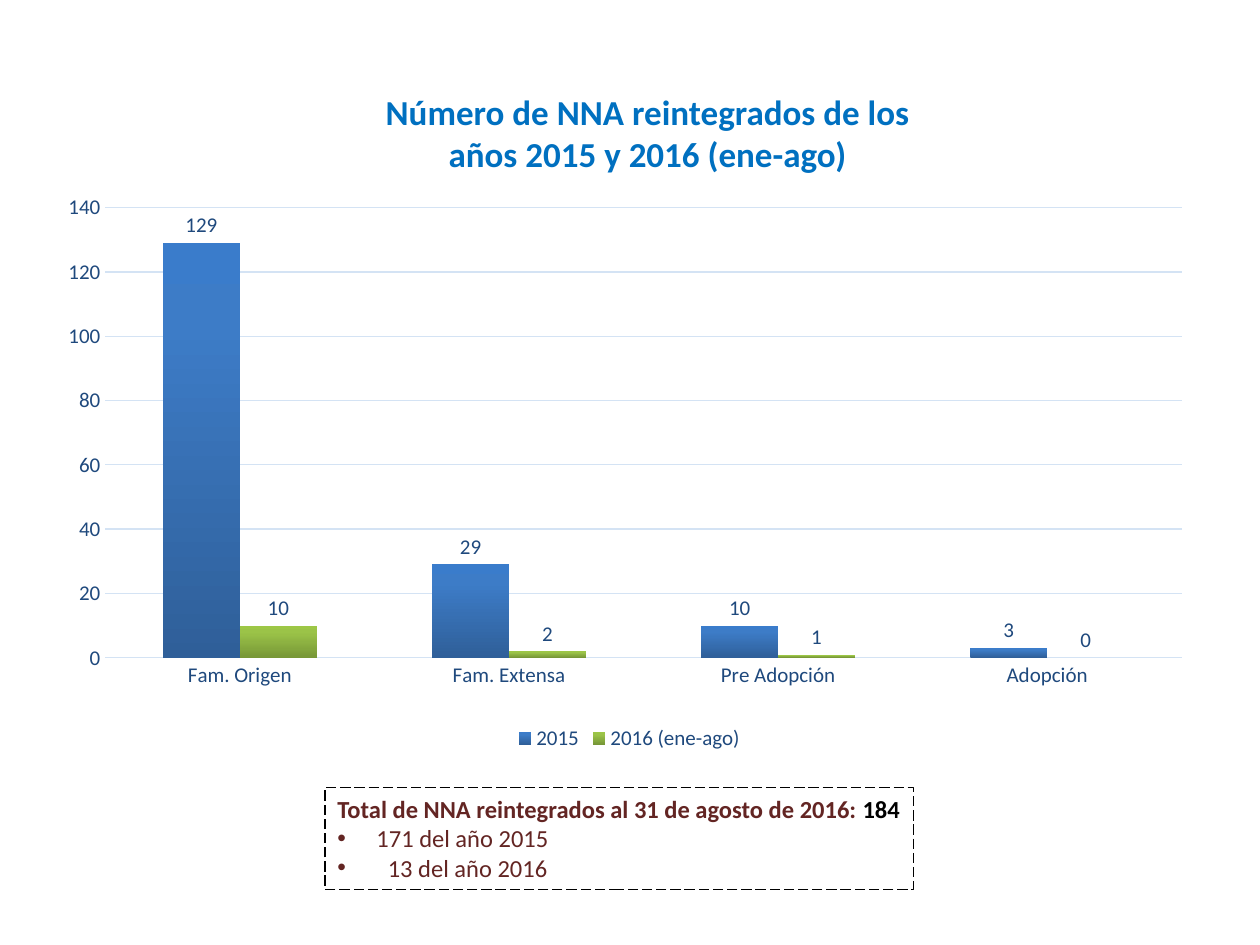
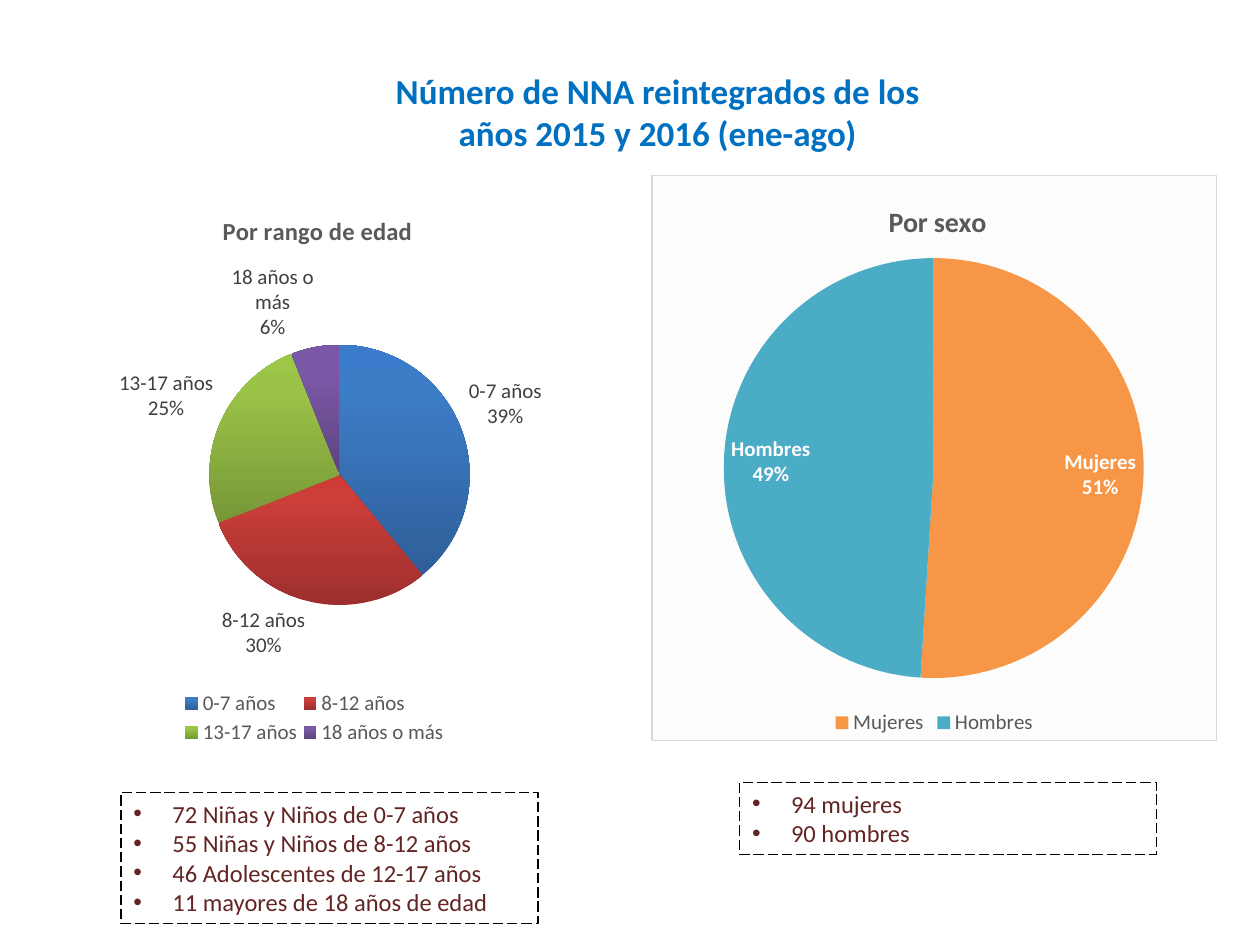
from copy import deepcopy
from dataclasses import dataclass
from typing import Optional

from lxml import etree
from pptx import Presentation
from pptx import util as u
from pptx.chart import data as chart_data
from pptx.dml.color import RGBColor
from pptx.enum import chart as ch
from pptx.enum import dml, shapes, text
from pptx.oxml import parse_xml
from pptx.oxml.ns import nsdecls, qn

FONT = "Calibri"
HEADING = "Número de NNA reintegrados de los años 2015 y 2016 (ene-ago)"
COLORS = {
    "heading": "0070C0",
    "note": "632523",
    "black": "000000",
    "white": "FFFFFF",
    "axis_text": "1F497D",
    "grid": "D4E3F4",
    "legend_text": "595959",
    "label_text": "404040",
    "panel": "F2F2F2",
    "panel_border": "D9D9D9",
    "women": "F79646",
    "men": "4BACC6",
}
# Bottom, 80 % and top tone of each gradient
TONES = {
    "blue": ("2F5F99", "3D7CC7", "3A7CCB"),
    "red": ("9C2F2D", "CB3E3A", "CE3B37"),
    "green": ("779737", "9BC348", "9DC746"),
    "purple": ("5F4480", "7B58A6", "7C57A8"),
}


@dataclass
class Box:
    left: float
    top: float
    width: float
    height: float

    def lengths(self) -> tuple:
        return tuple(u.Inches(v) for v in (self.left, self.top, self.width, self.height))


@dataclass
class Bullet:
    words: str
    indent: float = 0.31


@dataclass
class Note:
    box: Box
    bullets: list
    lead: str = ""
    total: str = ""


@dataclass
class Pie:
    box: Box
    title: str
    title_size: int
    title_at: tuple
    shares: dict
    fills: list
    plot_at: tuple
    label_position: object
    label_color: str
    label_bold: bool = False
    legend_at: Optional[tuple] = None
    framed: bool = False


def rgb(name: str) -> RGBColor:
    return RGBColor.from_string(COLORS[name])


def set_font(font, size: float, color: str, bold: bool = False) -> None:
    font.name, font.size, font.bold = FONT, u.Pt(size), bold
    font.color.rgb = rgb(color)


def add_run(paragraph, words: str, size: float, color: str, bold: bool = False) -> None:
    run = paragraph.add_run()
    run.text = words
    set_font(run.font, size, color, bold)


# Slide parts
def add_titled_slide(prs, left: float, top: float):
    slide = prs.slides.add_slide(prs.slide_layouts[5])
    heading = slide.shapes.title
    heading.left, heading.top, heading.width, heading.height = Box(left, top, 4.88, 0.77).lengths()
    frame = heading.text_frame
    frame.word_wrap = True
    frame.auto_size = text.MSO_AUTO_SIZE.SHAPE_TO_FIT_TEXT
    frame.vertical_anchor = text.MSO_ANCHOR.TOP
    paragraph = frame.paragraphs[0]
    paragraph.alignment = text.PP_ALIGN.CENTER
    add_run(paragraph, HEADING, 20, "heading", True)
    return slide


def set_bullet(paragraph, indent: float) -> None:
    props = paragraph._p.get_or_add_pPr()
    props.set("marL", str(u.Inches(indent)))
    props.set("indent", str(-u.Inches(indent)))
    etree.SubElement(props, qn("a:buFont")).set("typeface", "Arial")
    etree.SubElement(props, qn("a:buChar")).set("char", "•")


def add_note(slide, note: Note) -> None:
    frame_box = slide.shapes.add_shape(shapes.MSO_SHAPE.RECTANGLE, *note.box.lengths())
    frame_box.shadow.inherit = False
    frame_box.fill.background()
    frame_box.line.color.rgb = rgb("black")
    frame_box.line.width = u.Pt(0.75)
    frame_box.line.dash_style = dml.MSO_LINE.LONG_DASH
    frame = frame_box.text_frame
    frame.word_wrap = True
    frame.auto_size = text.MSO_AUTO_SIZE.SHAPE_TO_FIT_TEXT
    frame.vertical_anchor = text.MSO_ANCHOR.TOP
    frame.margin_right = u.Inches(0.05)
    paragraph = frame.paragraphs[0]
    paragraph.alignment = text.PP_ALIGN.LEFT
    if note.lead:
        add_run(paragraph, note.lead, 14, "note", True)
        add_run(paragraph, note.total, 14, "black", True)
    for i, bullet in enumerate(note.bullets):
        if i or note.lead:
            paragraph = frame.add_paragraph()
            paragraph.alignment = text.PP_ALIGN.LEFT
        set_bullet(paragraph, bullet.indent)
        add_run(paragraph, bullet.words, 14, "note")


# Chart parts
def place_part(part, index: int, fractions: tuple, inner: bool = False) -> None:
    """Pin a chart part at fractions (x, y[, w, h]) of the chart."""
    for old in part.findall(qn("c:layout")):
        part.remove(old)
    keys = "xywh"[:len(fractions)]
    target = '<c:layoutTarget val="inner"/>' if inner else ""
    modes = "".join(f'<c:{k}Mode val="edge"/>' for k in "xy")
    sizes = "".join(f'<c:{k} val="{v}"/>' for k, v in zip(keys, fractions))
    part.insert(index, parse_xml(
        f'<c:layout {nsdecls("c")}><c:manualLayout>{target}{modes}{sizes}</c:manualLayout></c:layout>'))


def set_background(chart, framed: bool) -> None:
    fill, line = "<a:noFill/>", "<a:ln><a:noFill/></a:ln>"
    if framed:
        fill = (f'<a:pattFill prst="dkDnDiag"><a:fgClr><a:srgbClr val="{COLORS["panel"]}"/></a:fgClr>'
                f'<a:bgClr><a:srgbClr val="{COLORS["white"]}"/></a:bgClr></a:pattFill>')
        line = (f'<a:ln w="{u.Pt(0.75)}"><a:solidFill><a:srgbClr val="{COLORS["panel_border"]}"/>'
                '</a:solidFill></a:ln>')
    chart._chartSpace.find(qn("c:chart")).addnext(
        parse_xml(f'<c:spPr {nsdecls("c", "a")}>{fill}{line}</c:spPr>'))


def fill_parts(plot, parts: list, fills: list) -> None:
    """Fill series or points with a gradient of TONES or a plain colour."""
    for part, name in zip(parts, fills):
        fill = part.format.fill
        if name not in TONES:
            fill.solid()
            fill.fore_color.rgb = rgb(name)
            continue
        fill.gradient()
        fill.gradient_angle = 90
        for stop, position, tone in zip(fill.gradient_stops, (0, 0.8), TONES[name]):
            stop.position = position
            stop.color.rgb = RGBColor.from_string(tone)
    # Third stop at the top of each gradient
    gradients = [name for name in fills if name in TONES]
    for stops, name in zip(plot._element.iter(qn("a:gsLst")), gradients):
        top = deepcopy(stops[-1])
        top.set("pos", "100000")
        top.find(qn("a:srgbClr")).set("val", TONES[name][2])
        stops.append(top)


def add_chart(slide, kind, box: Box, categories, series: dict, legend_color: str, framed: bool = False):
    values = chart_data.CategoryChartData()
    values.categories = categories
    for name, numbers in series.items():
        values.add_series(name, numbers)
    chart = slide.shapes.add_chart(kind, *box.lengths(), values).chart
    set_font(chart.font, 10, "black")
    set_background(chart, framed)
    chart.has_title = False
    chart.has_legend = True
    chart.legend.position = ch.XL_LEGEND_POSITION.BOTTOM
    chart.legend.include_in_layout = False
    set_font(chart.legend.font, 12, legend_color)
    return chart


def add_reintegration_columns(slide) -> None:
    chart = add_chart(
        slide, ch.XL_CHART_TYPE.COLUMN_CLUSTERED, Box(0.28, 1.5, 9.43, 4.5),
        ["Fam. Origen", "Fam. Extensa", "Pre Adopción", "Adopción"],
        {"2015": (129, 29, 10, 3), "2016 (ene-ago)": (10, 2, 1, 0)}, "axis_text")
    plot = chart.plots[0]
    plot.gap_width, plot.overlap = 150, 0
    plot.vary_by_categories = False
    place_part(chart._chartSpace.find(".//" + qn("c:plotArea")), 0, (0.059, 0.033, 0.906, 0.794), True)
    fill_parts(plot, list(plot.series), ["blue", "green"])
    for year in plot.series:
        labels = year.data_labels
        labels.show_value = True
        labels.position = ch.XL_LABEL_POSITION.OUTSIDE_END
        set_font(labels.font, 12, "axis_text")
    for axis in (chart.category_axis, chart.value_axis):
        axis.major_tick_mark = axis.minor_tick_mark = ch.XL_TICK_MARK.NONE
        set_font(axis.tick_labels.font, 12, "axis_text")
    scale = chart.value_axis
    scale.minimum_scale, scale.maximum_scale, scale.major_unit = 0, 140, 20
    scale.has_major_gridlines = True
    scale.format.line.fill.background()
    for line in (scale.major_gridlines.format.line, chart.category_axis.format.line):
        line.color.rgb = rgb("grid")
        line.width = u.Pt(0.75)


def add_pie(slide, pie: Pie) -> None:
    chart = add_chart(slide, ch.XL_CHART_TYPE.PIE, pie.box, list(pie.shares),
                      {"Series 1": list(pie.shares.values())}, "legend_text", pie.framed)
    chart.has_title = True
    add_run(chart.chart_title.text_frame.paragraphs[0], pie.title, pie.title_size, "legend_text", True)
    chart_root = chart._chartSpace.find(qn("c:chart"))
    place_part(chart_root.find(qn("c:title")), 1, pie.title_at)
    place_part(chart_root.find(qn("c:plotArea")), 0, pie.plot_at, True)
    if pie.legend_at:
        place_part(chart_root.find(qn("c:legend")), 1, pie.legend_at)
    plot = chart.plots[0]
    plot.vary_by_categories = True
    shares = plot.series[0]
    fill_parts(plot, [shares.points[i] for i in range(len(pie.fills))], pie.fills)
    labels = shares.data_labels
    labels.show_value = False
    labels.show_percentage = labels.show_category_name = True
    labels.number_format, labels.number_format_is_linked = "0%", False
    labels.position = pie.label_position
    set_font(labels.font, 12, pie.label_color, pie.label_bold)
    separator = parse_xml(f'<c:separator {nsdecls("c")}>\n</c:separator>')
    labels._element.find(qn("c:showBubbleSize")).addnext(separator)


PIES = [
    Pie(Box(0.25, 1.48, 4.49, 4.49), "Por rango de edad", 14, (0.33, 0.04),
        {"0-7 años": 39, "8-12 años": 30, "13-17 años": 25, "18 años o más": 6},
        ["blue", "red", "green", "purple"], (0.314, 0.28, 0.461, 0.46),
        ch.XL_LABEL_POSITION.OUTSIDE_END, "label_text", legend_at=(0.26, 0.885, 0.48, 0.11)),
    Pie(Box(5.17, 1.39, 4.49, 4.49), "Por sexo", 16, (0.41, 0.04),
        {"Mujeres": 51, "Hombres": 49}, ["women", "men"], (0.127, 0.146, 0.744, 0.744),
        ch.XL_LABEL_POSITION.INSIDE_END, "white", label_bold=True, framed=True),
]
TOTAL_NOTE = Note(
    Box(2.58, 6.25, 4.67, 0.81), [Bullet("171 del año 2015"), Bullet("13 del año 2016", 0.4)],
    "Total de NNA reintegrados al 31 de agosto de 2016: ", "184")
GROUP_NOTES = [
    Note(Box(0.96, 6.29, 3.31, 1.04), [
        Bullet("72 Niñas y Niños de 0-7 años"), Bullet("55 Niñas y Niños de 8-12 años"),
        Bullet("46 Adolescentes de 12-17 años"), Bullet("11 mayores de 18 años de edad")]),
    Note(Box(5.87, 6.21, 3.31, 0.57), [Bullet("94 mujeres"), Bullet("90 hombres")]),
]


def main() -> None:
    prs = Presentation()
    prs.slide_width, prs.slide_height = u.Inches(10), u.Inches(7.5)

    # Reintegrations by destination
    by_destination = add_titled_slide(prs, 2.7, 0.67)
    add_reintegration_columns(by_destination)
    add_note(by_destination, TOTAL_NOTE)

    # Reintegrations by age and sex
    by_group = add_titled_slide(prs, 2.78, 0.5)
    for pie, note in zip(PIES, GROUP_NOTES):
        add_pie(by_group, pie)
        add_note(by_group, note)

    prs.save("out.pptx")


if __name__ == "__main__":
    main()
